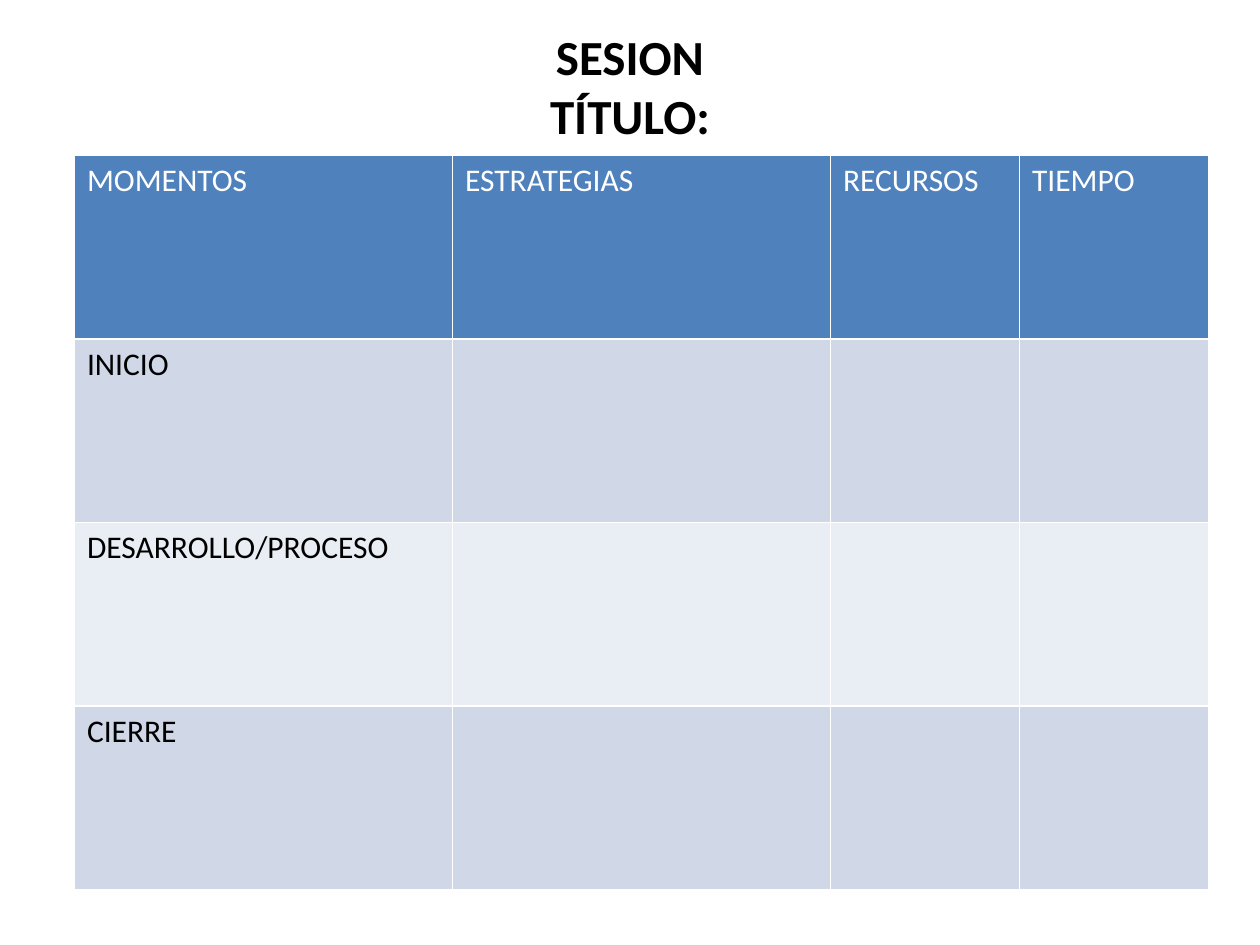
"""Build the lesson session planning slide."""
from pptx import Presentation
from pptx.dml.color import RGBColor
from pptx.enum.text import MSO_ANCHOR, PP_ALIGN
from pptx.oxml.ns import qn
from pptx.util import Cm, Pt
from lxml.etree import SubElement

WHITE = RGBColor(0xFF, 0xFF, 0xFF)
BLACK = RGBColor(0, 0, 0)
HEADER_BLUE = RGBColor(0x4F, 0x81, 0xBD)
BAND_DARK = RGBColor(0xD0, 0xD8, 0xE8)
BAND_LIGHT = RGBColor(0xE9, 0xED, 0xF4)

HEADINGS = ["MOMENTOS", "ESTRATEGIAS", "RECURSOS", "TIEMPO"]
MOMENTS = ["INICIO", "DESARROLLO/PROCESO", "CIERRE"]
COLUMN_WIDTHS = [7.62, 7.62, 3.81, 3.81]
ROW_HEIGHT = 3.7


def write(frame, text, size=18, color=BLACK, bold=False, align=PP_ALIGN.LEFT):
    frame.text = text
    for paragraph in frame.paragraphs:
        paragraph.alignment = align
        font = paragraph.font
        font.name, font.size, font.bold = "Calibri", Pt(size), bold
        font.color.rgb = color


class SessionSlide:
    def __init__(self, slide, border_color=WHITE, border_width=1):
        self.slide = slide
        self.border_color = border_color
        self.border_width = border_width

    def title(self, text, left, top, width, height):
        heading = self.slide.shapes.add_textbox(
            Cm(left), Cm(top), Cm(width), Cm(height))
        frame = heading.text_frame
        frame.word_wrap = True
        frame.vertical_anchor = MSO_ANCHOR.MIDDLE
        write(frame, text, size=28, bold=True, align=PP_ALIGN.CENTER)

    def border(self, cell):
        properties = cell._tc.get_or_add_tcPr()
        for side in ("a:lnL", "a:lnR", "a:lnT", "a:lnB"):
            line = SubElement(properties, qn(side), w=str(Pt(self.border_width)))
            fill = SubElement(line, qn("a:solidFill"))
            SubElement(fill, qn("a:srgbClr"), val=str(self.border_color))

    def table(self, rows, left, top):
        plan = self.slide.shapes.add_table(
            len(rows), len(COLUMN_WIDTHS), Cm(left), Cm(top),
            Cm(sum(COLUMN_WIDTHS)), Cm(ROW_HEIGHT * len(rows))).table
        for column, width in zip(plan.columns, COLUMN_WIDTHS):
            column.width = Cm(width)
        for index, texts in enumerate(rows):
            plan.rows[index].height = Cm(ROW_HEIGHT)
            band = BAND_DARK if index % 2 else BAND_LIGHT
            fill, color = (band, BLACK) if index else (HEADER_BLUE, WHITE)
            for cell, text in zip(plan.rows[index].cells, texts):
                self.border(cell)
                cell.fill.solid()
                cell.fill.fore_color.rgb = fill
                write(cell.text_frame, text, color=color)


def main():
    deck = Presentation()
    deck.slide_width, deck.slide_height = Cm(25.4), Cm(19.05)
    session = SessionSlide(deck.slides.add_slide(deck.slide_layouts[6]))
    session.title("SESION\nTÍTULO:", 1.27, 0.4, 22.86, 2.65)
    blanks = [""] * (len(HEADINGS) - 1)
    session.table([HEADINGS] + [[moment] + blanks for moment in MOMENTS], 1.5, 3.13)
    deck.save("out.pptx")


if __name__ == "__main__":
    main()
